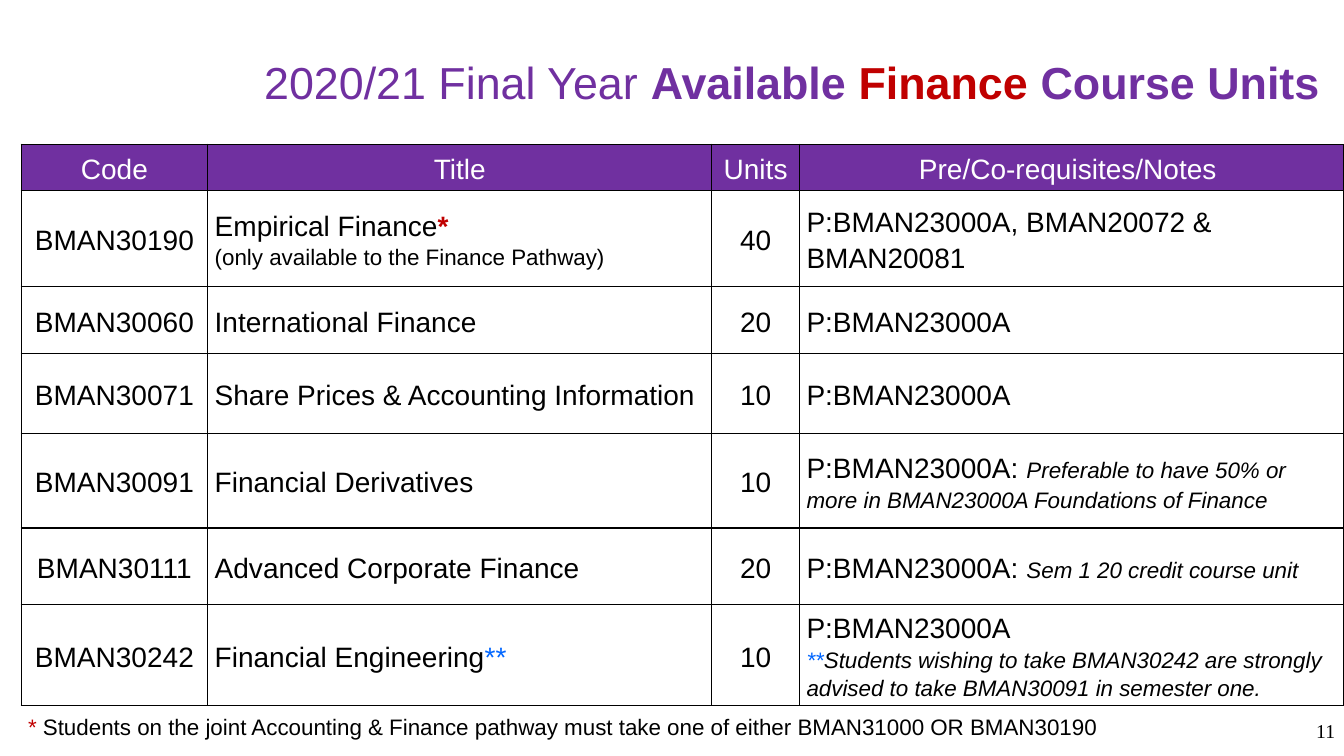
import pptx
import pptx.util
import pptx.dml.color
import pptx.enum.text
import pptx.oxml

PX = 9144  # EMU, 100 px to the inch
COLORS = {"purple": "7030A0", "red": "C00000", "blue": "0066FF",
          "black": "000000", "white": "FFFFFF"}
ALIGN = pptx.enum.text.PP_ALIGN
MIDDLE = pptx.enum.text.MSO_ANCHOR.MIDDLE


def write(tf, paragraphs, size, color="black", align=ALIGN.LEFT, spacing=1.15, font="Arial"):
    """Fill tf; a paragraph is a list of runs, each a text or (text, changed font settings)."""
    tf.word_wrap = True
    for i, runs in enumerate(paragraphs):
        p = tf.paragraphs[0] if i == 0 else tf.add_paragraph()
        p.alignment = align
        p.line_spacing = spacing
        p.font.name = font
        p.font.size = pptx.util.Pt(size)
        p.font.color.rgb = pptx.dml.color.RGBColor.from_string(COLORS[color])
        for run in runs:
            text, style = (run, {}) if isinstance(run, str) else run
            r = p.add_run()
            r.text = text
            if "size" in style:
                r.font.size = pptx.util.Pt(style["size"])
            if "color" in style:
                r.font.color.rgb = pptx.dml.color.RGBColor.from_string(COLORS[style["color"]])
            if "bold" in style:
                r.font.bold = True
            if "italic" in style:
                r.font.italic = True


def add_text(x, y, w, h):
    box = s.shapes.add_textbox(x * PX, y * PX, w * PX, h * PX)
    return box.text_frame


prs = pptx.Presentation()
prs.slide_width = pptx.util.Inches(13.33)
prs.slide_height = pptx.util.Inches(7.5)
s = prs.slides.add_slide(prs.slide_layouts[6])

# Page number and title
tf = add_text(1126, 700, 208, 50)
tf.vertical_anchor = MIDDLE
write(tf, [["11"]], 14, align=ALIGN.RIGHT, spacing=1.0, font="Times New Roman")

tf = add_text(234, 30, 1103, 101)
tf.vertical_anchor = MIDDLE
write(tf, [["2020/21 Final Year ",
            ("Available ", {"bold": True}),
            ("Finance", {"bold": True, "color": "red"}),
            (" Course Units", {"bold": True})]],
      32, "purple", ALIGN.CENTER, 1.0)

# Course table
note = {"size": 16, "italic": True}
prerequisite = "P:BMAN23000A"
header = ["Code", "Title", "Units", "Pre/Co-requisites/Notes "]
courses = [
    ("BMAN30190",
     [["Empirical Finance", ("*", {"color": "red", "bold": True})],
      [("(only available to the Finance Pathway)", {"size": 16})]],
     "40", [["P:BMAN23000A, BMAN20072 & BMAN20081"]]),
    ("BMAN30060", [["International Finance"]], "20", [[prerequisite]]),
    ("BMAN30071", [["Share Prices & Accounting Information"]], "10", [[prerequisite]]),
    ("BMAN30091", [["Financial Derivatives"]], "10",
     [[prerequisite + ": ",
       ("Preferable to have 50% or more in BMAN23000A Foundations of Finance", note)]]),
    ("BMAN30111", [["Advanced Corporate Finance"]], "20",
     [[prerequisite + ": ", ("Sem 1 20 credit course unit", note)]]),
    ("BMAN30242", [["Financial Engineering", ("**", {"color": "blue"})]], "10",
     [[prerequisite],
      [("**", {**note, "color": "blue"}),
       ("Students wishing to take BMAN30242 are strongly advised "
        "to take BMAN30091 in semester one.", note)]]),
]
rows = [[[[title]] for title in header]]
rows += [([[code]], title, [[units]], notes) for code, title, units, notes in courses]
col_widths = [185, 500, 87, 540]
row_heights = [46, 95, 67, 79, 94, 76, 100]

table = s.shapes.add_table(len(rows), len(header), 21 * PX, 143 * PX,
                           sum(col_widths) * PX, sum(row_heights) * PX).table
table.first_row = False
table.horz_banding = False
for column, width in zip(table.columns, col_widths):
    column.width = width * PX
for row, height in zip(table.rows, row_heights):
    row.height = height * PX

for i, row in enumerate(rows):
    for j, paragraphs in enumerate(row):
        cell = table.cell(i, j)
        cell.vertical_anchor = MIDDLE
        cell.margin_left = cell.margin_right = 7 * PX
        cell.margin_top = cell.margin_bottom = 0
        centred = i == 0 or j in (0, 2)
        write(cell.text_frame, paragraphs, 20, "white" if i == 0 else "black",
              ALIGN.CENTER if centred else ALIGN.LEFT)
        # Borders come before the fill in the cell properties
        tcPr = cell._tc.get_or_add_tcPr()
        for side in ("lnL", "lnR", "lnT", "lnB"):
            tcPr.append(pptx.oxml.parse_xml(
                f'<a:{side} xmlns:a="http://schemas.openxmlformats.org/drawingml/2006/main" '
                f'w="12700"><a:solidFill><a:srgbClr val="{COLORS["black"]}"/></a:solidFill>'
                f'</a:{side}>'))
        if i == 0:
            cell.fill.solid()
            cell.fill.fore_color.rgb = pptx.dml.color.RGBColor.from_string(COLORS["purple"])
        else:
            cell.fill.background()

# Footnote
write(add_text(18, 699, 1236, 39),
      [[("* ", {"color": "red"}),
        "Students on the joint Accounting & Finance pathway must take one of either "
        "BMAN31000 OR BMAN30190"]], 16)

prs.save("out.pptx")
